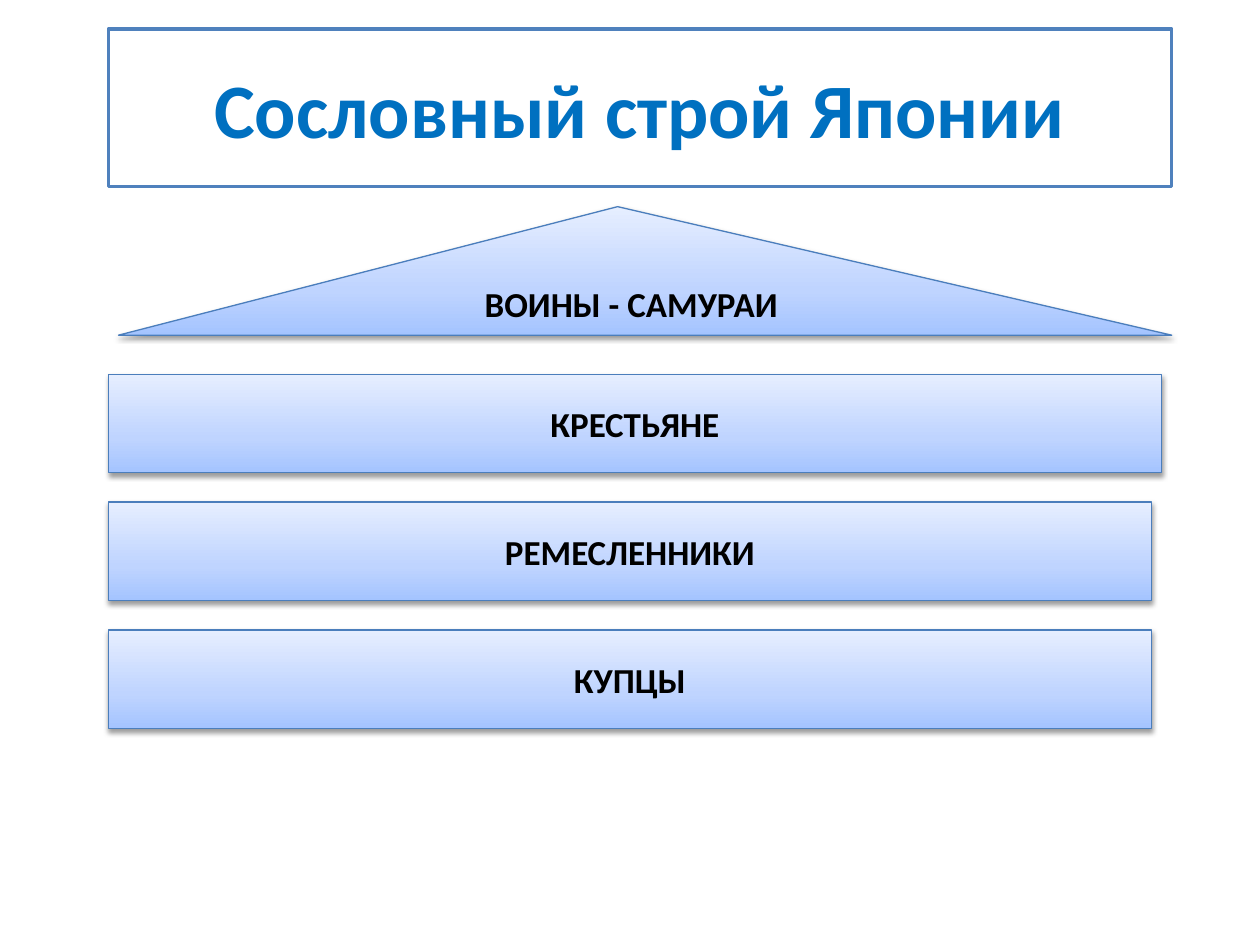
from dataclasses import dataclass

from lxml.etree import SubElement
from pptx import Presentation
from pptx.dml.color import RGBColor
from pptx.enum.shapes import MSO_SHAPE as Shape
from pptx.enum.text import MSO_ANCHOR as Anchor, PP_ALIGN as Align
from pptx.oxml import parse_xml
from pptx.oxml.ns import nsdecls, qn
from pptx.util import Inches, Pt

TITLE = "Сословный строй Японии"
ROOF = "ВОИНЫ - САМУРАИ"
# Lower estates with their widths in inches
ESTATES = [("КРЕСТЬЯНЕ", 8.36), ("РЕМЕСЛЕННИКИ", 8.28), ("КУПЦЫ", 8.28)]

LEFT = 0.86
RIGHT = 9.3
TITLE_TOP, TITLE_HEIGHT = 0.23, 1.25
ROOF_LEFT, ROOF_TOP, ROOF_HEIGHT = 0.94, 1.64, 1.02
ROOF_PEAK = 0.474
BAR_TOP, BAR_HEIGHT, BAR_PITCH = 2.97, 0.78, 1.015


@dataclass(frozen=True)
class Theme:
    font: str = "Calibri"
    title_size: int = 44
    label_size: int = 20
    title_color: str = "0070C0"
    label_color: str = "000000"
    title_fill: str = "FFFFFF"
    title_line: str = "4F81BD"
    line: str = "4B7EBC"
    shadow: str = "000000"
    gradient: tuple = ((0, "A4C4FF"), (35, "BFD4FF"), (100, "E6EEFF"))


THEME = Theme()


def add_box(page, kind, left, top, width, height, line, weight):
    box = page.shapes.add_shape(
        kind, Inches(left), Inches(top), Inches(width), Inches(height))
    box.shadow.inherit = False
    box.line.color.rgb = RGBColor.from_string(line)
    box.line.width = Pt(weight)
    return box


def write(box, text, size, color):
    frame = box.text_frame
    frame.word_wrap = True
    frame.vertical_anchor = Anchor.MIDDLE
    para = frame.paragraphs[0]
    para.alignment = Align.CENTER
    span = para.add_run()
    span.text = text
    span.font.name = THEME.font
    span.font.size = Pt(size)
    span.font.bold = True
    span.font.color.rgb = RGBColor.from_string(color)


def shade(box):
    """Give the box an upward three-stop gradient and a soft shadow below."""
    box.fill.background()
    properties = box.fill._xPr
    stops = "".join(
        f'<a:gs pos="{share * 1000}"><a:srgbClr val="{color}"/></a:gs>'
        for share, color in THEME.gradient)
    gradient = parse_xml(
        f'<a:gradFill {nsdecls("a")} rotWithShape="1"><a:gsLst>{stops}</a:gsLst>'
        '<a:lin ang="16200000" scaled="0"/></a:gradFill>')
    properties.replace(properties.find(qn("a:noFill")), gradient)
    shadow = SubElement(
        properties.find(qn("a:effectLst")), qn("a:outerShdw"),
        blurRad=str(Pt(3.1)), dist=str(Pt(1.6)), dir="5400000", rotWithShape="0")
    color = SubElement(shadow, qn("a:srgbClr"), val=THEME.shadow)
    SubElement(color, qn("a:alpha"), val="38000")


def add_estate(page, kind, text, left, top, width, height):
    box = add_box(page, kind, left, top, width, height, THEME.line, 0.75)
    shade(box)
    write(box, text, THEME.label_size, THEME.label_color)
    return box


def main():
    deck = Presentation()
    deck.slide_width, deck.slide_height = Inches(10), Inches(7.5)
    page = deck.slides.add_slide(deck.slide_layouts[6])

    title = add_box(page, Shape.RECTANGLE, LEFT, TITLE_TOP, RIGHT - LEFT,
                    TITLE_HEIGHT, THEME.title_line, 2)
    title.fill.solid()
    title.fill.fore_color.rgb = RGBColor.from_string(THEME.title_fill)
    write(title, TITLE, THEME.title_size, THEME.title_color)

    roof = add_estate(page, Shape.ISOSCELES_TRIANGLE, ROOF, ROOF_LEFT, ROOF_TOP,
                      RIGHT - ROOF_LEFT, ROOF_HEIGHT)
    roof.adjustments[0] = ROOF_PEAK

    for row, (text, width) in enumerate(ESTATES):
        add_estate(page, Shape.RECTANGLE, text, LEFT, BAR_TOP + row * BAR_PITCH,
                   width, BAR_HEIGHT)

    deck.save("out.pptx")


if __name__ == "__main__":
    main()
